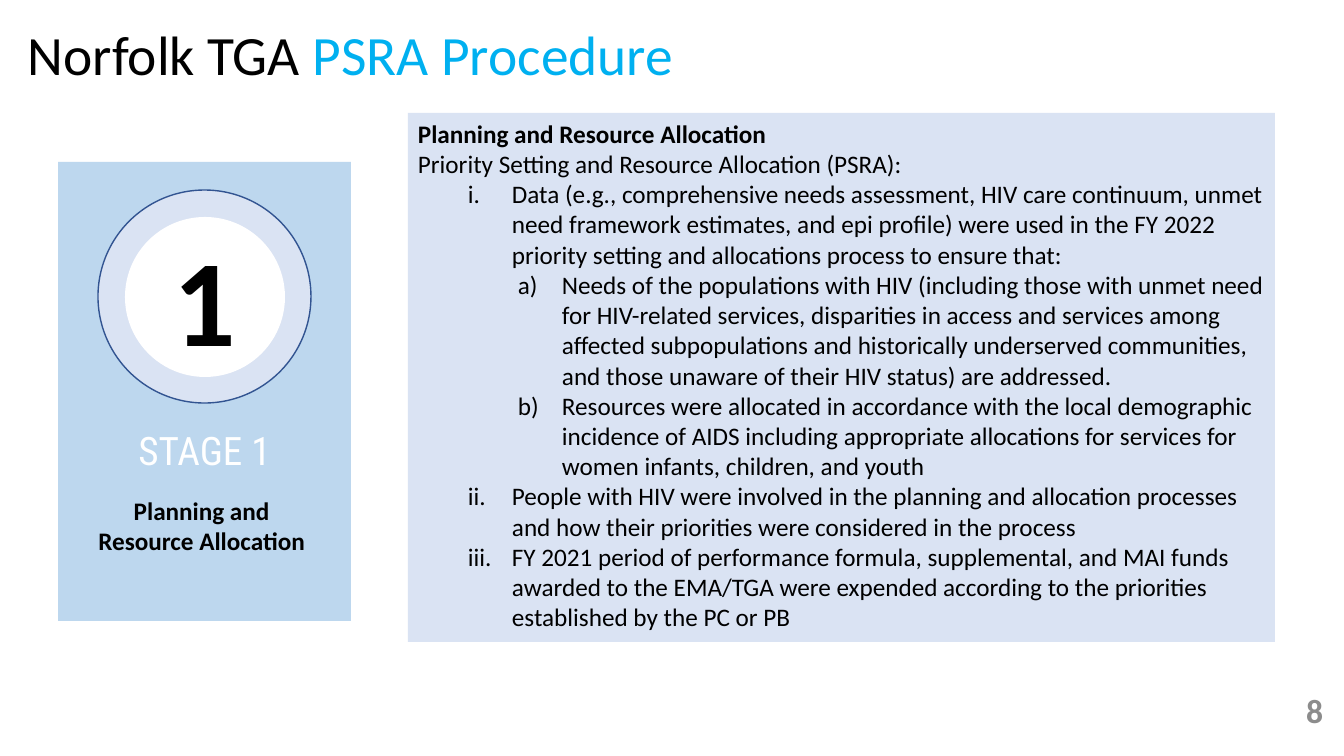
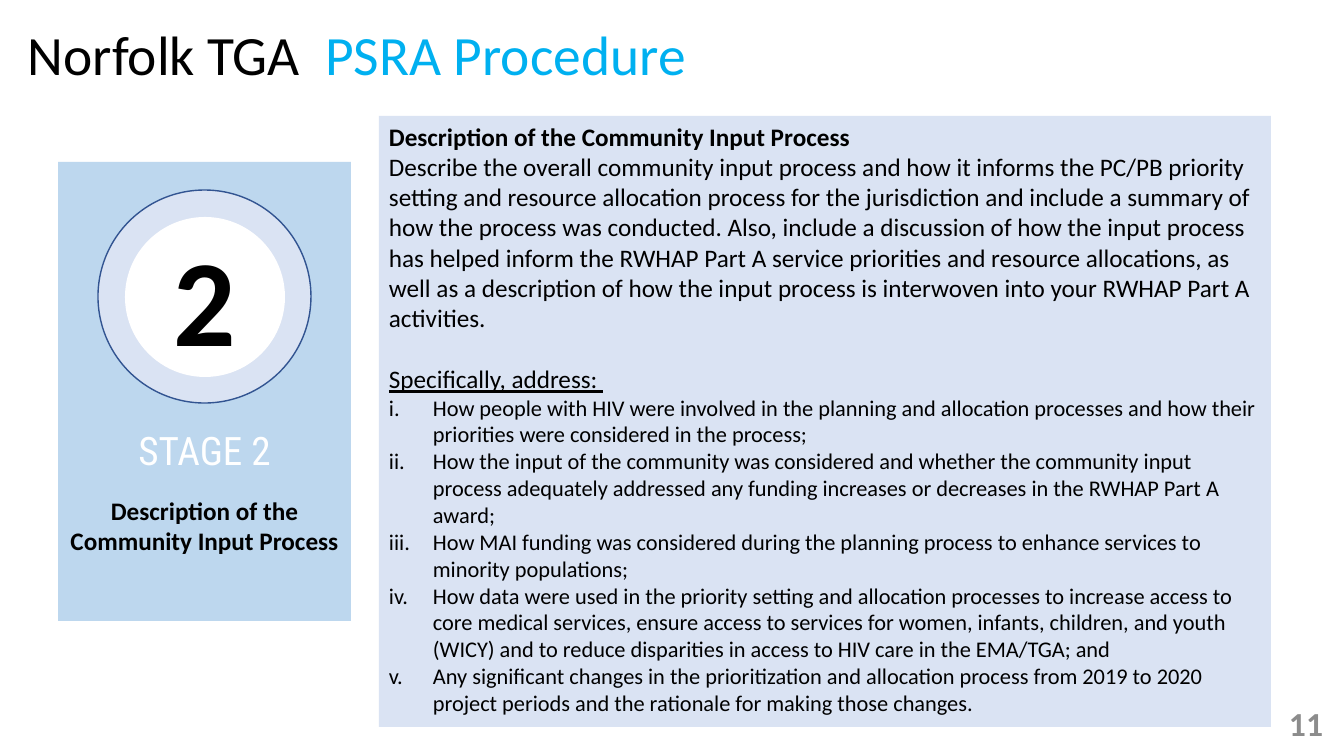
from lxml import etree
from pptx import Presentation
from pptx.dml.color import RGBColor
from pptx.enum.shapes import MSO_SHAPE
from pptx.enum.text import MSO_ANCHOR, MSO_AUTO_SIZE, PP_ALIGN
from pptx.oxml.ns import qn
from pptx.util import Pt

EMU_PER_PX = 914400 / 100.8
BLACK = RGBColor(0x00, 0x00, 0x00)
WHITE = RGBColor(0xFF, 0xFF, 0xFF)
CYAN = RGBColor(0x00, 0xB0, 0xF0)
GREY = RGBColor(0x8C, 0x8C, 0x8C)
PALE_BLUE = RGBColor(0xDA, 0xE3, 0xF3)
CARD_BLUE = RGBColor(0xBD, 0xD7, 0xEE)
RING_BLUE = RGBColor(0x32, 0x54, 0x91)

ROMAN = "romanLcPeriod"
LETTER = "alphaLcParenR"
HANGING = 44
LEVEL_STEP = 50


def px(length):
    return round(length * EMU_PER_PX)


def add_run(paragraph, text, size=18, color=BLACK, bold=False,
            underline=False, font="Calibri"):
    run = paragraph.add_run()
    run.text = text
    run.font.name = font
    run.font.size = Pt(size)
    run.font.bold = bold
    run.font.underline = underline
    run.font.color.rgb = color


def number_paragraph(paragraph, scheme, level):
    """Give the paragraph automatic numbering with a hanging indent."""
    paragraph.level = level
    properties = paragraph._p.get_or_add_pPr()
    properties.set("marL", str(px(HANGING + LEVEL_STEP * level)))
    properties.set("indent", str(px(-HANGING)))
    etree.SubElement(properties, qn("a:buAutoNum"), type=scheme)


def write(frame, text, align=PP_ALIGN.LEFT, scheme=None, level=0,
          space_before=0, **run_format):
    """Add one paragraph, filling the frame's first one when it is empty."""
    paragraph = frame.paragraphs[0]
    if paragraph.runs:
        paragraph = frame.add_paragraph()
    paragraph.alignment = align
    if scheme:
        number_paragraph(paragraph, scheme, level)
    if space_before:
        paragraph.space_before = Pt(space_before)
    add_run(paragraph, text, **run_format)
    return paragraph


class Deck:
    def __init__(self):
        self.presentation = Presentation()
        self.presentation.slide_width = px(1344)
        self.presentation.slide_height = px(756)
        self.slide = None

    def new_slide(self):
        blank = self.presentation.slide_layouts[6]
        self.slide = self.presentation.slides.add_slide(blank)

    def shape(self, kind, box, fill, line=None):
        shape = self.slide.shapes.add_shape(kind, *map(px, box))
        shape.shadow.inherit = False
        shape.fill.solid()
        shape.fill.fore_color.rgb = fill
        if line:
            shape.line.color.rgb = line
            shape.line.width = Pt(1)
        else:
            shape.line.fill.background()
        return shape

    def text_frame(self, box, anchor=MSO_ANCHOR.TOP):
        frame = self.slide.shapes.add_textbox(*map(px, box)).text_frame
        frame.word_wrap = True
        frame.vertical_anchor = anchor
        return frame

    def title(self, lead, topic):
        frame = self.text_frame((18, 21, 1200, 73), MSO_ANCHOR.MIDDLE)
        paragraph = write(frame, lead, size=39.6)
        paragraph.line_spacing = 0.9
        add_run(paragraph, topic, size=39.6, color=CYAN)

    def panel(self, box, entries):
        frame = self.shape(MSO_SHAPE.RECTANGLE, box, PALE_BLUE).text_frame
        frame.word_wrap = True
        frame.vertical_anchor = MSO_ANCHOR.TOP
        frame.auto_size = MSO_AUTO_SIZE.SHAPE_TO_FIT_TEXT
        for text, text_format in entries:
            write(frame, text, **text_format)

    def stage_card(self, number, caption_lines):
        self.shape(MSO_SHAPE.RECTANGLE, (58, 162, 293, 459), CARD_BLUE)
        self.shape(MSO_SHAPE.OVAL, (98, 190, 213, 213), PALE_BLUE, RING_BLUE)
        disc = self.shape(MSO_SHAPE.OVAL, (125, 217, 160, 160), WHITE)
        disc.text_frame.vertical_anchor = MSO_ANCHOR.MIDDLE
        write(disc.text_frame, str(number), align=PP_ALIGN.CENTER,
              size=88, bold=True)
        write(self.text_frame((58, 421, 293, 58)), f"STAGE {number}",
              align=PP_ALIGN.CENTER, size=28, color=WHITE,
              font="Roboto Condensed")
        caption = self.text_frame((58, 490, 293, 71))
        for line in caption_lines:
            write(caption, line, align=PP_ALIGN.CENTER, bold=True)

    def page_number(self, number, top):
        frame = self.text_frame((1271, top, 62, 59), MSO_ANCHOR.MIDDLE)
        write(frame, str(number), align=PP_ALIGN.RIGHT, size=24,
              color=GREY, bold=True)


HEADING = {"bold": True}
BODY = {}
MAIN_POINT = {"scheme": ROMAN, "level": 1}
SUB_POINT = {"scheme": LETTER, "level": 2}
SUBHEADING = {"underline": True, "space_before": 22}
QUESTION = {"scheme": ROMAN, "size": 16}

STAGES = [
    {
        "lead": "Norfolk TGA ",
        "caption": ["Planning and ", "Resource Allocation "],
        "panel_box": (408, 113, 867, 529),
        "page": (8, 681),
        "entries": [
            ("Planning and Resource Allocation", HEADING),
            ("Priority Setting and Resource Allocation (PSRA):", BODY),
            ("Data (e.g., comprehensive needs assessment, HIV care continuum, "
             "unmet need framework estimates, and epi profile) were used in "
             "the FY 2022 priority setting and allocations process to ensure "
             "that:", MAIN_POINT),
            ("Needs of the populations with HIV (including those with unmet "
             "need for HIV-related services, disparities in access and "
             "services among affected subpopulations and historically "
             "underserved communities, and those unaware of their HIV status) "
             "are addressed.", SUB_POINT),
            ("Resources were allocated in accordance with the local "
             "demographic incidence of AIDS including appropriate allocations "
             "for services for women infants, children, and youth", SUB_POINT),
            ("People with HIV were involved in the planning and allocation "
             "processes and how their priorities were considered in the "
             "process", MAIN_POINT),
            ("FY 2021 period of performance formula, supplemental, and MAI "
             "funds awarded to the EMA/TGA were expended according to the "
             "priorities established by the PC or PB", MAIN_POINT),
        ],
    },
    {
        "lead": "Norfolk TGA  ",
        "caption": ["Description of the", "Community Input Process"],
        "panel_box": (379, 116, 892, 611),
        "page": (11, 694),
        "entries": [
            ("Description of the Community Input Process", HEADING),
            ("Describe the overall community input process and how it informs "
             "the PC/PB priority setting and resource allocation process for "
             "the jurisdiction and include a summary of how the process was "
             "conducted. Also, include a discussion of how the input process "
             "has helped inform the RWHAP Part A service priorities and "
             "resource allocations, as well as a description of how the input "
             "process is interwoven into your RWHAP Part A activities.", BODY),
            ("Specifically, address: ", SUBHEADING),
            ("How people with HIV were involved in the planning and "
             "allocation processes and how their priorities were considered "
             "in the process;", QUESTION),
            ("How the input of the community was considered and whether the "
             "community input process adequately addressed any funding "
             "increases or decreases in the RWHAP Part A award;", QUESTION),
            ("How MAI funding was considered during the planning process to "
             "enhance services to minority populations;", QUESTION),
            ("How data were used in the priority setting and allocation "
             "processes to increase access to core medical services, ensure "
             "access to services for women, infants, children, and youth "
             "(WICY) and to reduce disparities in access to HIV care in the "
             "EMA/TGA; and", QUESTION),
            ("Any significant changes in the prioritization and allocation "
             "process from 2019 to 2020 project periods and the rationale for "
             "making those changes.", QUESTION),
        ],
    },
]


def main():
    deck = Deck()
    for number, stage in enumerate(STAGES, start=1):
        deck.new_slide()
        deck.title(stage["lead"], "PSRA Procedure")
        deck.panel(stage["panel_box"], stage["entries"])
        deck.stage_card(number, stage["caption"])
        deck.page_number(*stage["page"])
    deck.presentation.save("out.pptx")


if __name__ == "__main__":
    main()
